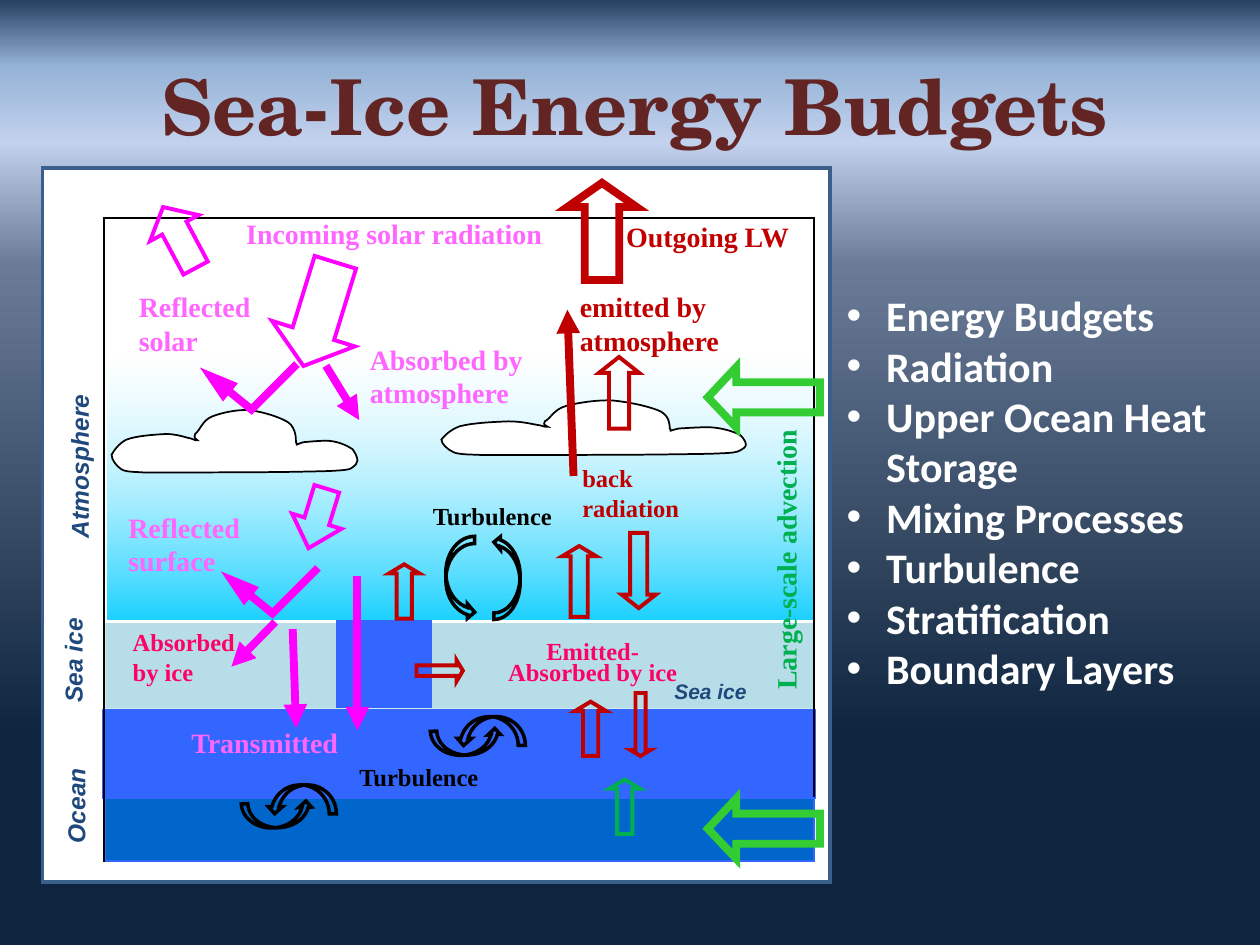
from pptx import Presentation
from pptx.dml.color import RGBColor
from pptx.enum.shapes import MSO_CONNECTOR as CONN, MSO_SHAPE as SHAPE
from pptx.enum.text import MSO_AUTO_SIZE as FIT, PP_ALIGN as AL
from pptx.oxml.ns import qn
from pptx.util import Pt
from lxml.etree import SubElement

COLORS = {
    "white": "FFFFFF", "black": "000000", "border": "3A5F8C", "title": "632523",
    "ice": "B7DEE8", "ocean": "3366FF", "deep": "0066CC", "navy": "1F497D",
    "magenta": "FF00FF", "pink": "FF66FF", "rose": "FF0066", "red": "C00000",
    "lime": "33CC33", "green": "00B050", "sky_top": "A9EEFF", "sky_low": "00CCFF",
    "bg_top": "254061", "bg_haze": "95B3D7", "bg_light": "C2D1ED",
    "bg_slate": "697B96", "bg_night": "0F243E",
}
TIMES, ARIAL = "Times New Roman", "Arial"
WIDE, TIGHT = (7.2, 3.6), (1.5, 0.75)

BACKDROP = [(0, "bg_top", 100), (7, "bg_haze", 100), (15, "bg_light", 100),
            (28, "bg_slate", 100), (78, "bg_night", 100)]
SKY = [(0, "sky_top", 0), (100, "sky_low", 89)]

CLOUD_KNOTS = [
    (13, 100), (25, 100), (61, 100), (74, 99), (88, 98), (88, 98), (92, 97),
    (96, 96), (97, 95), (98, 92), (99, 89), (100, 86), (100, 81),
    (100, 76), (99, 68), (98, 63), (96, 58), (93, 52), (89, 50),
    (86, 49), (81, 51), (78, 52), (76, 54), (76, 56), (75, 56),
    (75, 56), (76, 57), (75, 52), (75, 46), (75, 30), (72, 21),
    (69, 13), (62, 4), (56, 1), (51, 0), (45, 5), (41, 11),
    (37, 17), (36, 33), (34, 39), (33, 46), (35, 48), (35, 49),
    (34, 50), (33, 46), (31, 45), (29, 43), (26, 39), (22, 39),
    (17, 40), (10, 42), (6, 48), (3, 54), (1, 65), (0, 72),
    (0, 80), (2, 90), (4, 95), (6, 100), (11, 99), (13, 100),
]
CLOUDS = [(39.5, 138, 140.5, 36), (228, 132.5, 174, 31.5)]
CHEVRON = [(55.5, 0), (29.5, 26), (0, 2)]
CHEVRON_SPOTS = [(90, 112), (102, 228.5)]

LAYERS = [
    ((0, 0, 450, 408), "white", "border", 2),
    ((36, 260, 405, 49), "ice", None, 0),
    ((34.5, 309.5, 407, 50.5), "ocean", "ocean", 0.75),
    ((37, 106, 404, 152), SKY, None, 0),
    ((35, 28.5, 406, 367.5), None, "black", 1),
    ((36, 360, 405, 36), "deep", "ocean", 0.75),
    ((168, 258.5, 54.5, 50), "ocean", "ocean", 0.75),
]
ARROWS = [
    ((133.5, 52.5, 49.5, 62), 197.1, 0.391, "magenta", 2.25),
    ((142.5, 182.5, 29.5, 35.5), 197.1, 0.545, "magenta", 2.25),
    ((62.5, 20, 31.5, 39.5), 331.9, 0.433, "magenta", 2.25),
    ((331, 208.5, 19.5, 43), 180, 0.397, "red", 2.25),
    ((297, 216, 19.5, 40.5), 0, 0.301, "red", 2.25),
    ((300, 8.5, 39.5, 55.5), 0, 0.349, "red", 4.5),
    ((318, 108, 23, 41), 0, 0.397, "red", 2.25),
    ((304.5, 305, 17.5, 31), 0, 0.301, "red", 2.25),
    ((221, 274, 12, 26.5), 90, 0.301, "red", 2.25),
    ((336, 300, 11.5, 36), 180, 0.301, "red", 2.25),
    ((198, 226.5, 17.5, 31), 0, 0.301, "red", 2.25),
    ((324, 349.5, 17.5, 31), 0, 0.301, "green", 2.25),
    ((395, 99, 34.5, 64), 270, 0.472, "lime", 4.5),
    ((395, 345.5, 34.5, 64), 270, 0.472, "lime", 4.5),
]
RAYS = [
    ((133, 259.5, 108, 285), "magenta", "med"), ((303.5, 176, 300, 81), "red", "med"),
    ((162, 113, 181, 144), "magenta", "med"), ((143, 263.5, 145, 320), "magenta", "med"),
    ((180, 233, 180, 321.5), "magenta", "med"), ((213.5, 325, 213.5, 334.5), "ocean", None),
]
SWIRLS = [
    ((114, 362.5, 40.5, 14.5), 357.3), ((128.5, 352.5, 39.5, 16.5), 180),
    ((222, 321, 40.5, 14.5), 357.3), ((236.5, 313.5, 39.5, 16.5), 180),
    ((241.5, 226.5, 48, 15), 270), ((215, 226, 47.5, 16.5), 90),
]
LABELS = [
    ("Incoming solar radiation", (114, 27, 174, 21), 16, "pink",
     {"inset": TIGHT, "align": AL.CENTER, "wrap": False}),
    ("Reflected solar", (48, 66, 110, 46), 16, "pink", {}),
    ("Reflected surface", (42, 192, 96, 46), 16, "pink", {}),
    ("Absorbed by atmosphere", (180, 96, 104, 44), 16, "pink", {}),
    ("Transmitted", (78, 315, 102, 26.5), 16, "pink", {}),
    ("Emitted-Absorbed by ice", (252, 268.5, 125, 31.5), 14, "rose",
     {"align": AL.CENTER, "spacing": 0.7}),
    ("Absorbed by ice", (44.5, 259, 80, 41), 14, "rose", {}),
    ("back\nradiation", (307, 168, 62, 36), 14, "red", {"inset": TIGHT}),
    ("emitted by atmosphere", (300, 66, 100, 46), 16, "red", {}),
    ("Outgoing LW", (316, 28.5, 112, 21), 16, "red", {"inset": TIGHT, "align": AL.RIGHT}),
    ("Large-scale advection", (346, 216.5, 157.5, 21), 16, "green",
     {"inset": TIGHT, "align": AL.RIGHT, "rot": 270}),
    ("Turbulence", (216, 187, 85, 24.5), 14, "black", {}),
    ("Turbulence", (174, 336, 109.5, 24.5), 14, "black", {}),
    ("Sea ice", (354, 288, 56, 21.5), 12, "navy",
     {"font": ARIAL, "italic": True, "wrap": False}),
] + [
    (text, box, 14, "navy", {"font": ARIAL, "italic": True, "wrap": False, "rot": 270})
    for text, box in [("Sea ice", (-14, 268.5, 63.5, 24.5)), ("Ocean", (-9.5, 352, 57.5, 24.5)),
                      ("Atmosphere", (-27, 158, 96.5, 24.5))]
]
TOPICS = ["Energy Budgets", "Radiation", "Upper Ocean Heat Storage", "Mixing Processes",
          "Turbulence", "Stratification", "Boundary Layers"]


def rgb(name):
    return RGBColor.from_string(COLORS[name])


def shift(box, origin):
    return [Pt(v) for v in (box[0] + origin[0], box[1] + origin[1], *box[2:])]


def set_gradient(fill, owner, stops):
    fill.gradient()
    fill.gradient_angle = 270
    stop_list = next(owner.element.iter(qn("a:gsLst")))
    stop_list.clear()
    for pos, color, alpha in stops:
        stop = SubElement(stop_list, qn("a:gs"), pos=str(pos * 1000))
        clr = SubElement(stop, qn("a:srgbClr"), val=COLORS[color])
        if alpha < 100:
            SubElement(clr, qn("a:alpha"), val=str(alpha * 1000))


def set_line(sp, color, width, head=None):
    if color is None:
        sp.line.fill.background()
        return
    sp.line.color.rgb, sp.line.width = rgb(color), Pt(width)
    ln = next(sp.element.iter(qn("a:ln")))
    SubElement(ln, qn("a:miter"), lim="800000")
    if head:
        SubElement(ln, qn("a:tailEnd"), type="triangle", len=head)


def style(sp, fill, color, width, head=None):
    sp.shadow.inherit = False
    if fill is None:
        sp.fill.background()
    elif isinstance(fill, list):
        set_gradient(sp.fill, sp, fill)
    else:
        sp.fill.solid()
        sp.fill.fore_color.rgb = rgb(fill)
    set_line(sp, color, width, head)


def add_preset(s, kind, box, origin, fill, color, width, rot=0):
    sp = s.shapes.add_shape(kind, *shift(box, origin))
    sp.rotation = rot
    style(sp, fill, color, width)
    return sp


def add_outline(s, points, origin, close):
    start, *rest = [shift(point, origin) for point in points]
    builder = s.shapes.build_freeform(*start)
    builder.add_line_segments(rest, close=close)
    return builder.convert_to_shape()


def add_cloud(s, box, origin):
    x, y, w, h = box
    points = [(x + px * w / 100, y + py * h / 100) for px, py in CLOUD_KNOTS]
    sp = add_outline(s, points, origin, True)
    segments = list(sp.element.iter(qn("a:lnTo")))
    outline = segments[0].getparent()
    for i in range(0, len(CLOUD_KNOTS) - 1, 3):
        curve = SubElement(outline, qn("a:cubicBezTo"))
        for segment in segments[i:i + 3]:
            curve.append(segment[0])
            outline.remove(segment)
    outline.append(outline.find(qn("a:close")))
    style(sp, "white", "black", 1)


def add_label(s, text, box, size, color, origin=(0, 0), font=TIMES, italic=False,
              align=AL.LEFT, spacing=None, inset=WIDE, wrap=True, rot=0):
    sp = s.shapes.add_textbox(*shift(box, origin))
    sp.rotation = rot
    tf = sp.text_frame
    tf.text = text
    dx, dy = map(Pt, inset)
    frame = {"margin_left": dx, "margin_right": dx, "margin_top": dy, "margin_bottom": dy,
             "word_wrap": wrap, "auto_size": FIT.SHAPE_TO_FIT_TEXT}
    for key, value in frame.items():
        setattr(tf, key, value)
    for p in tf.paragraphs:
        p.alignment, p.line_spacing = align, spacing
        for r in p.runs:
            for key, value in {"name": font, "size": Pt(size), "bold": True, "italic": italic}.items():
                setattr(r.font, key, value)
            r.font.color.rgb = rgb(color)
    return tf


def add_diagram(s, origin):
    for box, fill, color, width in LAYERS:
        add_preset(s, SHAPE.RECTANGLE, box, origin, fill, color, width)
    for box in CLOUDS:
        add_cloud(s, box, origin)
    for box, rot, head, color, width in ARROWS:
        add_preset(s, SHAPE.UP_ARROW, box, origin, None, color, width, rot).adjustments[1] = head
    for x, y in CHEVRON_SPOTS:
        points = [(x + dx, y + dy) for dx, dy in CHEVRON]
        style(add_outline(s, points, origin, False), None, "magenta", 4.5, "lg")
    for ends, color, head in RAYS:
        ray = s.shapes.add_connector(CONN.STRAIGHT, *shift(ends[:2], origin), *shift(ends[2:], origin))
        set_line(ray, color, 4.5, head)
        SubElement(ray.element.spPr, qn("a:effectLst"))
    for box, rot in SWIRLS:
        add_preset(s, SHAPE.CURVED_UP_ARROW, box, origin, None, "black", 2, rot)
    for text, box, size, color, options in LABELS:
        add_label(s, text, box, size, color, origin, **options)


def add_topics(s, box):
    tf = add_label(s, "\n".join(TOPICS), box, 24, "white", font="Calibri")
    for p in tf.paragraphs:
        pPr = p._p.get_or_add_pPr()
        pPr.set("marL", str(Pt(22.5)))
        pPr.set("indent", str(-Pt(22.5)))
        SubElement(pPr, qn("a:buFont"), typeface=ARIAL)
        SubElement(pPr, qn("a:buChar"), char="•")


def main():
    prs = Presentation()
    prs.slide_width, prs.slide_height = Pt(720), Pt(540)
    s = prs.slides.add_slide(prs.slide_layouts[6])
    set_gradient(s.background.fill, s, BACKDROP)
    add_diagram(s, (24.25, 96))
    add_topics(s, (476.75, 162, 231, 240))
    add_label(s, "Sea-Ice Energy Budgets", (48, 30, 630, 60.5), 44, "title",
              font="TeX Gyre Schola", align=AL.CENTER)
    prs.save("out.pptx")


if __name__ == "__main__":
    main()
